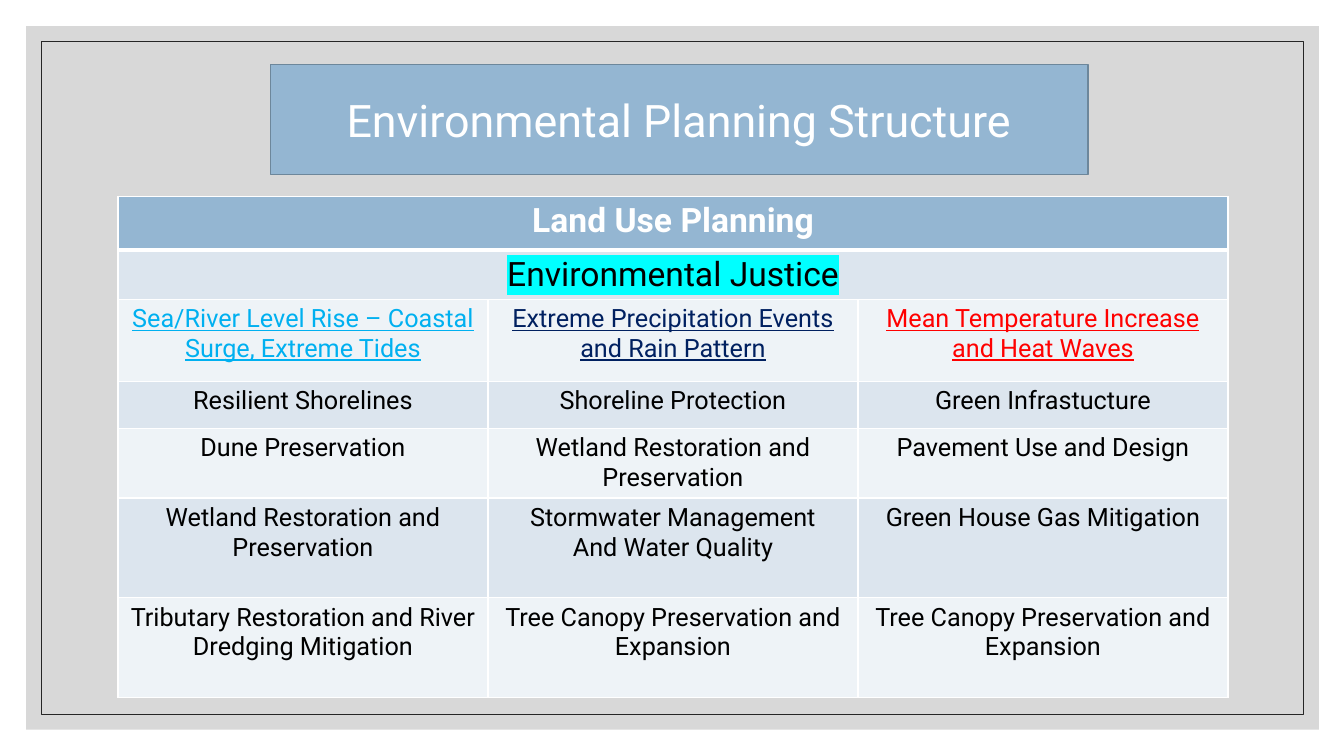
from dataclasses import dataclass

from lxml.etree import SubElement
from pptx import Presentation
from pptx.dml.color import RGBColor
from pptx.enum.shapes import MSO_SHAPE
from pptx.enum.text import MSO_ANCHOR, MSO_AUTO_SIZE, PP_ALIGN
from pptx.oxml import parse_xml
from pptx.oxml.ns import nsdecls, qn
from pptx.util import Inches, Pt


@dataclass(frozen=True)
class Theme:
    """Colours, font and type sizes of the slide."""
    font: str = "Roboto"
    title_size: int = 32
    heading_size: int = 24
    body_size: int = 18
    white: str = "FFFFFF"
    black: str = "000000"
    panel: str = "BFBFBF"
    frame: str = "262626"
    accent: str = "94B6D2"
    accent_edge: str = "6D879B"
    bands: tuple = ("DCE5EE", "EEF3F7")
    highlight: str = "00FFFF"
    topics: tuple = ("00B0F0", "002060", "FF0000")


THEME = Theme()
COLUMN_WIDTH = 3.67
ROW_HEIGHTS = (0.53, 0.47, 0.81, 0.47, 0.69, 0.99, 0.99)
TOPICS = (
    "Sea/River Level Rise – Coastal Surge, Extreme Tides",
    "Extreme Precipitation Events and Rain Pattern",
    "Mean Temperature Increase and Heat Waves",
)
MEASURES = (
    ("Resilient Shorelines", "Shoreline Protection", "Green Infrastucture"),
    ("Dune Preservation", "Wetland Restoration and Preservation", "Pavement Use and Design"),
    ("Wetland Restoration and Preservation", "Stormwater Management\nAnd Water Quality",
     "Green House Gas Mitigation"),
    ("Tributary Restoration and River Dredging Mitigation",
     "Tree Canopy Preservation and Expansion", "Tree Canopy Preservation and Expansion"),
)


def colour(code):
    """Turn a hexadecimal code into a colour."""
    return RGBColor.from_string(code)


def paint(target, code):
    """Give a shape or cell a solid fill."""
    target.fill.solid()
    target.fill.fore_color.rgb = colour(code)


def outline(box, code, width):
    """Give a shape a solid outline."""
    box.line.color.rgb = colour(code)
    box.line.width = Pt(width)


def write(frame, text, size, code, bold=False, underline=False):
    """Write centred lines into a text frame and return their runs."""
    spans = []
    for index, line in enumerate(text.split("\n")):
        para = frame.add_paragraph() if index else frame.paragraphs[0]
        para.alignment = PP_ALIGN.CENTER
        span = para.add_run()
        span.text = line
        span.font.name = THEME.font
        span.font.size = Pt(size)
        span.font.bold = bold
        span.font.underline = underline
        span.font.color.rgb = colour(code)
        spans.append(span)
    return spans


def highlight(span, code):
    """Mark a run with a highlight colour."""
    mark = parse_xml(f'<a:highlight {nsdecls("a")}><a:srgbClr val="{code}"/></a:highlight>')
    span.font.fill._xPr.find(qn("a:solidFill")).addnext(mark)


def add_rectangle(page, left, top, width, height):
    """Add a rectangle without fill or shadow."""
    box = page.shapes.add_shape(
        MSO_SHAPE.RECTANGLE, Inches(left), Inches(top), Inches(width), Inches(height))
    box.shadow.inherit = False
    box.fill.background()
    return box


def add_background(page):
    """Add the translucent panel and its thin frame."""
    panel = add_rectangle(page, 0.26, 0.26, 12.82, 6.98)
    paint(panel, THEME.panel)
    panel.line.fill.background()
    tone = panel.element.spPr.find(qn("a:solidFill")).find(qn("a:srgbClr"))
    SubElement(tone, qn("a:alpha"), val="60000")
    outline(add_rectangle(page, 0.41, 0.41, 12.52, 6.68), THEME.frame, 0.5)


def add_title(page, text):
    """Place the title in a filled box in front of the panel."""
    title = page.shapes.title
    title.left, title.top = Inches(2.68), Inches(0.64)
    title.width, title.height = Inches(8.11), Inches(1.09)
    paint(title, THEME.accent)
    outline(title, THEME.accent_edge, 1)
    frame = title.text_frame
    frame.word_wrap = True
    frame.auto_size = MSO_AUTO_SIZE.NONE
    frame.vertical_anchor = MSO_ANCHOR.MIDDLE
    write(frame, text, THEME.title_size, THEME.white)
    title.element.getparent().append(title.element)


def set_borders(cell, bottom=1):
    """Draw white borders around a cell."""
    properties = cell._tc.get_or_add_tcPr()
    widths = {"lnL": 1, "lnR": 1, "lnT": 1, "lnB": bottom}
    for position, (side, width) in enumerate(widths.items()):
        border = parse_xml(
            f'<a:{side} {nsdecls("a")} w="{Pt(width)}"><a:solidFill>'
            f'<a:srgbClr val="{THEME.white}"/></a:solidFill></a:{side}>')
        properties.insert(position, border)


def add_planning_table(page):
    """Add the table of planning topics and measures."""
    frame = page.shapes.add_table(
        len(ROW_HEIGHTS), len(TOPICS), Inches(1.17), Inches(1.95),
        Inches(COLUMN_WIDTH * len(TOPICS)), Inches(sum(ROW_HEIGHTS)))
    table = frame.table
    for column in table.columns:
        column.width = Inches(COLUMN_WIDTH)
    for index, (row, height) in enumerate(zip(table.rows, ROW_HEIGHTS)):
        row.height = Inches(height)
        for cell in row.cells:
            paint(cell, THEME.bands[(index - 1) % 2] if index else THEME.accent)
            set_borders(cell, 1 if index else 3)
    for index in range(2):
        table.cell(index, 0).merge(table.cell(index, len(TOPICS) - 1))
    write(table.cell(0, 0).text_frame, "Land Use Planning",
          THEME.heading_size, THEME.white, bold=True)
    for span in write(table.cell(1, 0).text_frame, "Environmental Justice",
                      THEME.heading_size, THEME.black):
        highlight(span, THEME.highlight)
    for column, (topic, code) in enumerate(zip(TOPICS, THEME.topics)):
        write(table.cell(2, column).text_frame, topic, THEME.body_size, code, underline=True)
    for row, measures in enumerate(MEASURES, start=3):
        for column, measure in enumerate(measures):
            write(table.cell(row, column).text_frame, measure, THEME.body_size, THEME.black)


def main():
    """Build and save the slide."""
    deck = Presentation()
    deck.slide_width, deck.slide_height = Inches(13.33), Inches(7.5)
    page = deck.slides.add_slide(deck.slide_layouts[5])
    add_background(page)
    add_planning_table(page)
    add_title(page, "Environmental Planning Structure")
    deck.save("out.pptx")


if __name__ == "__main__":
    main()
